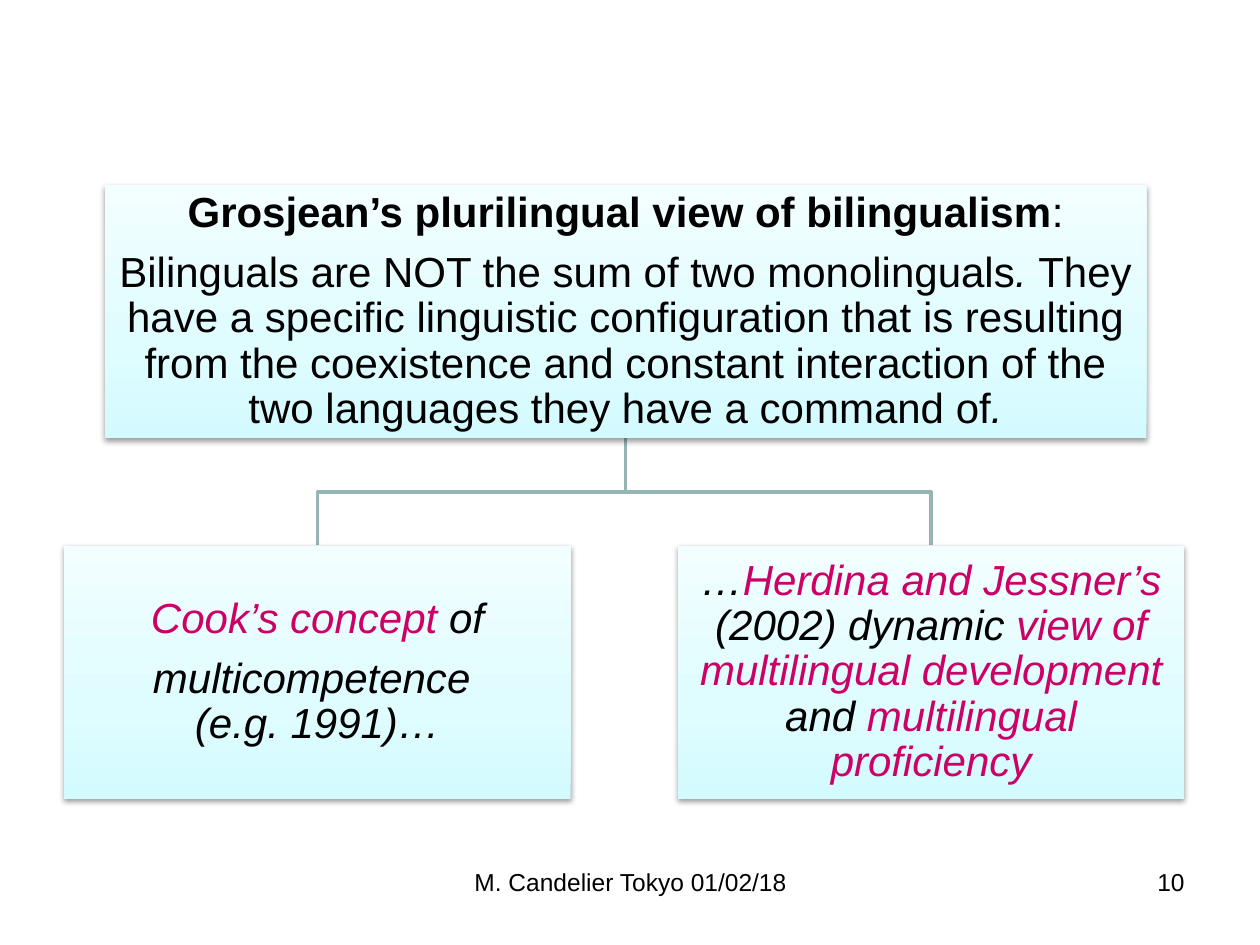
import pptx
import pptx.util
import pptx.dml.color
import pptx.enum.shapes
import pptx.enum.text
import pptx.oxml
import pptx.oxml.ns

RGBColor = pptx.dml.color.RGBColor
BLACK = RGBColor(0x00, 0x00, 0x00)
PINK = RGBColor(0xCC, 0x00, 0x66)
LINE = RGBColor(0x96, 0xB3, 0xB6)
STOPS = [
    (0, RGBColor(0xD3, 0xFB, 0xFF)),
    (35, RGBColor(0xDF, 0xFC, 0xFF)),
    (100, RGBColor(0xF2, 0xFE, 0xFF)),
]

WIDTH = pptx.util.Inches(10)
HEIGHT = pptx.util.Inches(7.5)
CENTER = pptx.enum.text.PP_ALIGN.CENTER
RIGHT = pptx.enum.text.PP_ALIGN.RIGHT
INSET = pptx.util.Inches(0.02)
CARD_FRAME = {
    "word_wrap": True,
    "vertical_anchor": pptx.enum.text.MSO_ANCHOR.MIDDLE,
    "margin_left": INSET,
    "margin_right": INSET,
    "margin_top": INSET,
    "margin_bottom": INSET,
}
CARD_PARAGRAPH = {
    "alignment": CENTER,
    "line_spacing": 0.9,
    "space_after": pptx.util.Pt(8.4),
}

CARD_HEIGHT = 26.8
PARENT = (8.3, 19.6, 82.7, CARD_HEIGHT)
CHILD_WIDTH, CHILD_GAP, CHILD_TOP = 40.2, 8.5, 57.73
CHILD_LEFT = 5.1

PLAIN = {"color": BLACK}
BOLD = {"color": BLACK, "bold": True}
ITALIC = {"color": BLACK, "italic": True}
ACCENT = {"color": PINK, "italic": True}

PARENT_TEXT = [
    [("Grosjean’s plurilingual view of bilingualism", BOLD), (":", PLAIN)],
    [
        ("Bilinguals are NOT the sum of two monolinguals", PLAIN),
        (". ", ITALIC),
        ("They have a specific linguistic configuration that is resulting "
         "from the coexistence and constant interaction of the two languages "
         "they have a command of", PLAIN),
        (".", ITALIC),
    ],
]
CHILD_TEXTS = [
    [
        [("Cook’s concept ", ACCENT), ("of", ITALIC)],
        [("multicompetence \n(e.g. 1991)…", ITALIC)],
    ],
    [
        [
            ("…", ITALIC),
            ("Herdina and Jessner’s ", ACCENT),
            ("(2002) dynamic ", ITALIC),
            ("view of multilingual development ", ACCENT),
            ("and ", ITALIC),
            ("multilingual proficiency", ACCENT),
        ]
    ],
]


def apply(target, values):
    for name, value in values.items():
        setattr(target, name, value)


def place(x, y):
    return round(WIDTH * x / 100), round(HEIGHT * y / 100)


def write(tf, paragraphs, frame, layout, size):
    apply(tf, frame)
    for i, runs in enumerate(paragraphs):
        p = tf.add_paragraph() if i else tf.paragraphs[0]
        apply(p, layout)
        for text, style in runs:
            for j, part in enumerate(text.split("\n")):
                if j:
                    p.add_line_break()
                r = p.add_run()
                r.text = part
                font = {"name": "Arial", "size": pptx.util.Pt(size),
                        "bold": style.get("bold", False),
                        "italic": style.get("italic", False)}
                apply(r.font, font)
                r.font.color.rgb = style["color"]


def style_card(sp):
    sp.line.fill.background()
    ns = pptx.oxml.ns.nsdecls("a")
    stops = "".join(
        f'<a:gs pos="{pos * 1000}"><a:srgbClr val="{color}"/></a:gs>'
        for pos, color in STOPS
    )
    fill = pptx.oxml.parse_xml(
        f'<a:gradFill {ns} rotWithShape="1"><a:gsLst>{stops}</a:gsLst>'
        '<a:lin ang="16200000" scaled="0"/></a:gradFill>'
    )
    shadow = pptx.oxml.parse_xml(
        f'<a:effectLst {ns}><a:outerShdw blurRad="40000" dist="20000" '
        'dir="5400000" rotWithShape="0"><a:srgbClr val="000000">'
        '<a:alpha val="38000"/></a:srgbClr></a:outerShdw></a:effectLst>'
    )
    props = sp.element.spPr
    props.find(pptx.oxml.ns.qn("a:ln")).addprevious(fill)
    props.append(shadow)


def add_card(s, box, paragraphs):
    sp = s.shapes.add_shape(
        pptx.enum.shapes.MSO_SHAPE.RECTANGLE, *place(*box[:2]), *place(*box[2:])
    )
    style_card(sp)
    write(sp.text_frame, paragraphs, CARD_FRAME, CARD_PARAGRAPH, 24)


def add_branch(s, parent, child):
    start_x = parent[0] + parent[2] / 2
    start_y = parent[1] + parent[3]
    end_x = child[0] + child[2] / 2
    middle = (start_y + child[1]) / 2
    builder = s.shapes.build_freeform(*place(start_x, start_y))
    corners = [(start_x, middle), (end_x, middle), (end_x, child[1])]
    builder.add_line_segments([place(*point) for point in corners], close=False)
    sp = builder.convert_to_shape()
    sp.shadow.inherit = False
    sp.fill.background()
    sp.line.color.rgb = LINE
    sp.line.width = pptx.util.Pt(2)


def add_tree(s, parent):
    children = [
        (CHILD_LEFT + i * (CHILD_WIDTH + CHILD_GAP), CHILD_TOP,
         CHILD_WIDTH, CARD_HEIGHT)
        for i in range(len(CHILD_TEXTS))
    ]
    for child in children:
        add_branch(s, parent, child)
    add_card(s, parent, PARENT_TEXT)
    for child, paragraphs in zip(children, CHILD_TEXTS):
        add_card(s, child, paragraphs)


def add_footer(s, box, text, alignment):
    sp = s.shapes.add_textbox(*place(*box[:2]), *place(*box[2:]))
    write(sp.text_frame, [[(text, PLAIN)]], {"word_wrap": True},
          {"alignment": alignment}, 14)


def main():
    prs = pptx.Presentation()
    apply(prs, {"slide_width": WIDTH, "slide_height": HEIGHT})
    s = prs.slides.add_slide(prs.slide_layouts[6])
    add_tree(s, PARENT)
    add_footer(s, (34.2, 91.07, 31.7, 6.93), "M. Candelier Tokyo 01/02/18", CENTER)
    add_footer(s, (71.7, 91.07, 23.3, 6.93), "10", RIGHT)
    prs.save("out.pptx")


if __name__ == "__main__":
    main()
